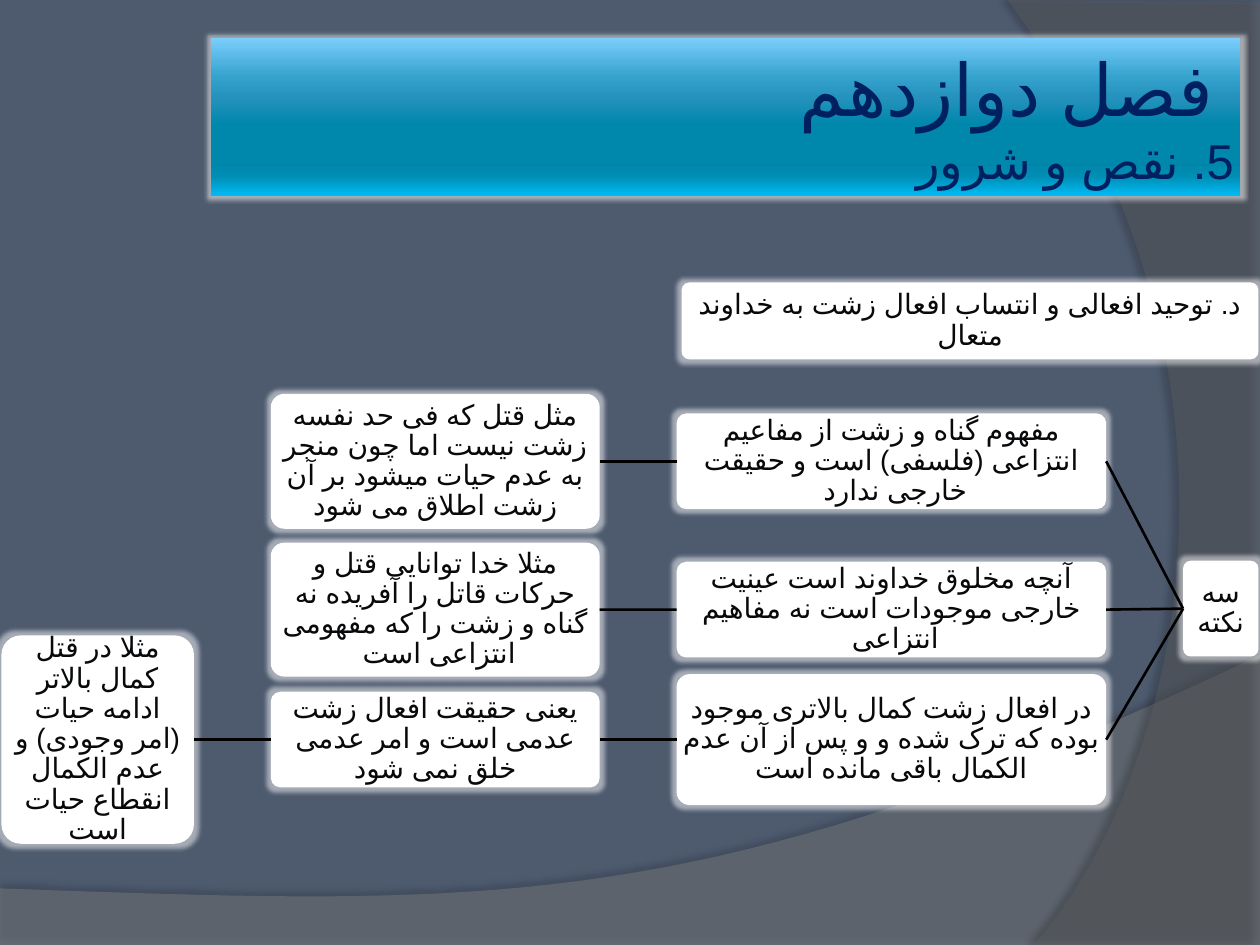
from dataclasses import dataclass

from lxml import etree
from pptx import Presentation
from pptx.dml.color import RGBColor
from pptx.enum.lang import MSO_LANGUAGE_ID
from pptx.enum.shapes import MSO_CONNECTOR, MSO_SHAPE
from pptx.enum.text import MSO_ANCHOR, MSO_AUTO_SIZE, PP_ALIGN
from pptx.oxml.ns import qn
from pptx.util import Cm, Pt

STRAIGHT = MSO_CONNECTOR.STRAIGHT
ROUNDED = MSO_SHAPE.ROUNDED_RECTANGLE
MIDDLE = MSO_ANCHOR.MIDDLE
NO_AUTO_SIZE = MSO_AUTO_SIZE.NONE
CENTER, RIGHT = PP_ALIGN.CENTER, PP_ALIGN.RIGHT
PERSIAN = MSO_LANGUAGE_ID.FARSI
LEFT_SIDE, RIGHT_SIDE = 1, 3
FONT = "Arial"
WIDTH, HEIGHT = 25.4, 19.05
COLORS = {
    "background": "4E5B6F", "wave": "7F7F7F", "arc": "5E5E5E", "box": "FFFFFF",
    "text": "08090B", "title": "002060", "line": "000000", "shadow": "000000",
}
TITLE_GRADIENT = [
    (0, "7BCEFC"), (25, "35A2CD"), (38, "2592BD"), (55, "0087AC"),
    (80, "0086AB"), (88, "008EB4"), (100, "00BAF4"),
]


@dataclass
class Column:
    left: float
    width: float


@dataclass
class Box:
    column: Column
    center: float
    height: float
    text: str


GAP = 1.55
RESULT = Column(0.03, 3.88)
EXAMPLE = Column(RESULT.left + RESULT.width + GAP, 6.63)
POINT = Column(EXAMPLE.left + EXAMPLE.width + GAP, 8.66)
ROOT = Column(POINT.left + POINT.width + GAP, 1.52)
HEADING = Column(13.74, 11.63)
ROWS = [9.3, 12.29, 14.91]

HEADING_BOX = Box(HEADING, 6.47, 1.55, "د. توحید افعالی و انتساب افعال زشت به خداوند متعال")
ROOT_BOX = Box(ROOT, 12.27, 1.93, "سه نکته")
BRANCHES = [
    [
        Box(POINT, ROWS[0], 1.93, "مفهوم گناه و زشت از مفاعیم انتزاعی (فلسفی) است و حقیقت خارجی ندارد "),
        Box(EXAMPLE, ROWS[0], 2.72, "مثل قتل که فی حد نفسه زشت نیست اما چون منجر به عدم حیات میشود بر آن زشت اطلاق می شود"),
    ],
    [
        Box(POINT, ROWS[1], 1.93, "آنچه مخلوق خداوند است عینیت خارجی موجودات است نه مفاهیم انتزاعی "),
        Box(EXAMPLE, ROWS[1], 2.7, "مثلا خدا توانایی قتل و حرکات قاتل را آفریده نه گناه و زشت را که مفهومی انتزاعی است "),
    ],
    [
        Box(POINT, ROWS[2], 2.64, "در افعال زشت کمال بالاتری موجود بوده که ترک شده و و پس از آن عدم الکمال باقی مانده است"),
        Box(EXAMPLE, ROWS[2], 1.93, "یعنی حقیقت افعال زشت عدمی است و امر عدمی خلق نمی شود"),
        Box(RESULT, ROWS[2], 4.2, "مثلا در قتل کمال بالاتر ادامه حیات (امر وجودی) و عدم الکمال انقطاع حیات است"),
    ],
]


def color(name: str) -> RGBColor:
    return RGBColor.from_string(COLORS[name])


def add_color(parent, hex_value: str, opacity: int) -> None:
    node = etree.SubElement(parent, qn("a:srgbClr"), val=hex_value)
    etree.SubElement(node, qn("a:alpha"), val=str(opacity * 1000))


def add_effect(shape, tag: str, name: str, opacity: int, **attributes: str) -> None:
    shape.shadow.inherit = False
    effects = shape._element.spPr.find(qn("a:effectLst"))
    add_color(etree.SubElement(effects, qn(tag), **attributes), COLORS[name], opacity)


def add_glow(shape) -> None:
    add_effect(shape, "a:glow", "box", 50, rad=str(Pt(5)))


def format_paragraph(paragraph, alignment, sizes: list[float], name: str) -> None:
    paragraph.alignment = alignment
    paragraph._p.get_or_add_pPr().set("rtl", "1")
    for run, size in zip(paragraph.runs, sizes):
        run.font.size = Pt(size)
        run.font.name = FONT
        run.font.language_id = PERSIAN
        run.font.color.rgb = color(name)
        etree.SubElement(run.font._element, qn("a:cs"), typeface=FONT)


def format_frame(text_frame, margin: float) -> None:
    text_frame.word_wrap = True
    text_frame.auto_size = NO_AUTO_SIZE
    text_frame.vertical_anchor = MIDDLE
    text_frame.margin_left = text_frame.margin_right = Cm(margin)
    text_frame.margin_top = text_frame.margin_bottom = Cm(margin)


def curve(start, control_a, control_b, end, steps: int = 40) -> list[tuple]:
    points = []
    for step in range(steps + 1):
        t = step / steps
        weights = ((1 - t) ** 3, 3 * t * (1 - t) ** 2, 3 * t * t * (1 - t), t ** 3)
        corners = (start, control_a, control_b, end)
        points.append(tuple(sum(w * c[axis] for w, c in zip(weights, corners)) for axis in (0, 1)))
    return points


def add_backdrop(slide, points: list[tuple], name: str, opacity: int,
                 shadow_opacity: int, distance: float, direction: int) -> None:
    outline = [(Cm(x), Cm(y)) for x, y in points]
    builder = slide.shapes.build_freeform(*outline[0])
    builder.add_line_segments(outline[1:], close=True)
    shape = builder.convert_to_shape()
    shape.fill.solid()
    shape.fill.fore_color.rgb = color(name)
    fill_color = shape._element.spPr.find(qn("a:solidFill"))[0]
    etree.SubElement(fill_color, qn("a:alpha"), val=str(opacity * 1000))
    shape.line.fill.background()
    add_effect(shape, "a:outerShdw", "shadow", shadow_opacity, blurRad=str(Pt(4)),
               dist=str(Pt(distance)), dir=str(direction * 60000))


def format_title(title) -> None:
    title.left, title.top, title.width, title.height = Cm(4.25), Cm(0.76), Cm(20.75), Cm(3.18)
    title.fill.gradient()
    title.fill.gradient_angle = 270
    stops = title._element.spPr.find(".//" + qn("a:gsLst"))
    for stop in list(stops):
        stops.remove(stop)
    for position, hex_value in TITLE_GRADIENT:
        add_color(etree.SubElement(stops, qn("a:gs"), pos=str(position * 1000)), hex_value, 100)
    add_glow(title)
    title.text_frame.text = " فصل دوازدهم\v5. نقص و شرور"
    format_frame(title.text_frame, 0.13)
    format_paragraph(title.text_frame.paragraphs[0], RIGHT, [41.4, 27.9], "title")
    title._element.getparent().append(title._element)


def add_box(slide, box: Box):
    shape = slide.shapes.add_shape(ROUNDED, Cm(box.column.left), Cm(box.center - box.height / 2),
                                   Cm(box.column.width), Cm(box.height))
    shape.adjustments[0] = 0.1
    shape.fill.solid()
    shape.fill.fore_color.rgb = color("box")
    shape.line.fill.background()
    add_glow(shape)
    shape.text_frame.text = box.text
    format_frame(shape.text_frame, 0.03)
    paragraph = shape.text_frame.paragraphs[0]
    paragraph.line_spacing = 0.9
    format_paragraph(paragraph, CENTER, [16], "text")
    return shape


def join(slide, parent, child) -> None:
    connector = slide.shapes.add_connector(STRAIGHT, 0, 0, 0, 0)
    connector.begin_connect(parent, LEFT_SIDE)
    connector.end_connect(child, RIGHT_SIDE)
    connector.line.color.rgb = color("line")
    connector.line.width = Pt(1.5)
    etree.SubElement(connector._element.spPr, qn("a:effectLst"))


def main() -> None:
    presentation = Presentation()
    presentation.slide_width, presentation.slide_height = Cm(WIDTH), Cm(HEIGHT)
    slide = presentation.slides.add_slide(presentation.slide_layouts[5])
    slide.background.fill.solid()
    slide.background.fill.fore_color.rgb = color("background")

    wave = [(0, HEIGHT), (WIDTH, HEIGHT)]
    wave += curve((WIDTH, 13.21), (14.2, 18.52), (9.93, 18.26), (0, 17.91))
    add_backdrop(slide, wave, "wave", 45, 35, 3.5, 270)
    arc = [(WIDTH, 0.05), (WIDTH, HEIGHT)]
    arc += curve((20.85, HEIGHT), (23.75, 15.72), (25.86, 7.62), (20.32, 0))
    add_backdrop(slide, arc, "arc", 40, 45, 4, 180)

    format_title(slide.shapes.title)
    add_box(slide, HEADING_BOX)
    root = add_box(slide, ROOT_BOX)
    for branch in BRANCHES:
        parent = root
        for box in branch:
            child = add_box(slide, box)
            join(slide, parent, child)
            parent = child
    presentation.save("out.pptx")


if __name__ == "__main__":
    main()
